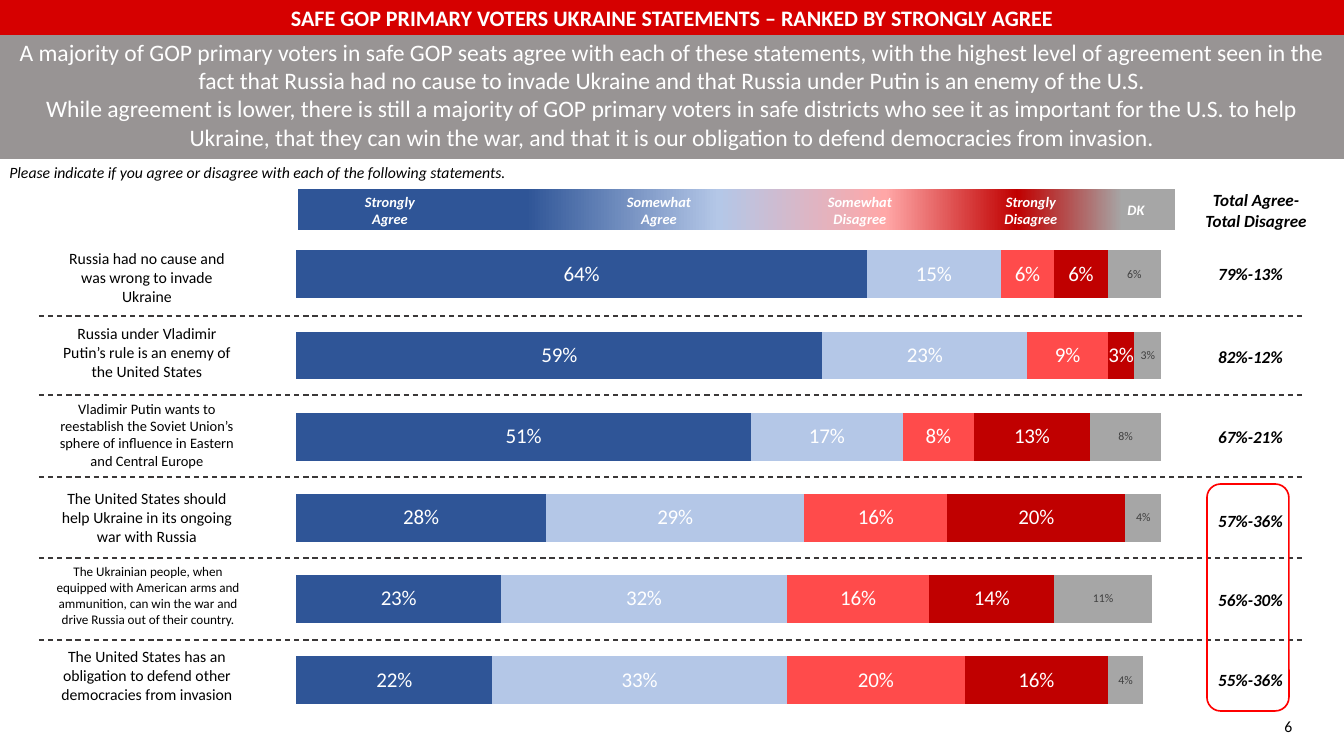
"""Build the slide of safe GOP primary voters' views on Ukraine statements."""
from pptx import Presentation
from pptx.chart.data import CategoryChartData
from pptx.dml.color import RGBColor
from pptx.enum.chart import XL_CHART_TYPE as CT, XL_LABEL_POSITION as LP
from pptx.enum.dml import MSO_LINE
from pptx.enum.shapes import MSO_CONNECTOR, MSO_SHAPE
from pptx.enum.text import MSO_ANCHOR, MSO_AUTO_SIZE, PP_ALIGN
from pptx.oxml import parse_xml
from pptx.oxml.ns import nsdecls, qn
from pptx.util import Pt

PX = 9676
FONT = "Calibri"
rgb = RGBColor.from_string


def put_text(tf, *lines, size=12, color="000000", bold=False, italic=False, align=PP_ALIGN.CENTER):
    tf.word_wrap = True
    for i, line in enumerate(lines):
        p = tf.add_paragraph() if i else tf.paragraphs[0]
        p.alignment = align
        r = p.add_run()
        r.text = line
        f = r.font
        f.name, f.size, f.bold, f.italic = FONT, Pt(size), bold, italic
        f.color.rgb = rgb(color)


def place(*lengths):
    return [n * PX for n in lengths]


prs = Presentation()
prs.slide_width, prs.slide_height = place(1344, 756)
s = prs.slides.add_slide(prs.slide_layouts[5])

title = s.shapes.title
title.left, title.top, title.width, title.height = place(0, 0, 1344, 35)
title.fill.solid()
title.fill.fore_color.rgb = rgb("D60000")
tf = title.text_frame
tf.auto_size = MSO_AUTO_SIZE.NONE
tf.vertical_anchor = MSO_ANCHOR.MIDDLE
put_text(tf, "SAFE GOP PRIMARY VOTERS UKRAINE STATEMENTS – RANKED BY STRONGLY AGREE",
         size=16.8, color="FFFFFF", bold=True)

band = s.shapes.add_shape(MSO_SHAPE.RECTANGLE, *place(0, 35, 1344, 124))
band.shadow.inherit = False
band.fill.solid()
band.fill.fore_color.rgb = rgb("989494")
band.line.fill.background()

summary = s.shapes.add_textbox(*place(0, 33, 1344, 124))
put_text(
    summary.text_frame,
    "A majority of GOP primary voters in safe GOP seats agree with each of these statements, "
    "with the highest level of agreement seen in the fact that Russia had no cause to invade "
    "Ukraine and that Russia under Putin is an enemy of the U.S.",
    "While agreement is lower, there is still a majority of GOP primary voters in safe districts "
    "who see it as important for the U.S. to help Ukraine, that they can win the war, and that "
    "it is our obligation to defend democracies from invasion.",
    size=18, color="FFFFFF")

question = s.shapes.add_textbox(*place(0, 158, 529, 28))
put_text(question.text_frame,
         "Please indicate if you agree or disagree with each of the following statements.",
         italic=True, align=PP_ALIGN.LEFT)

series = [
    ("2F5597", 16, "FFFFFF", (0.22, 0.23, 0.28, 0.51, 0.59, 0.64)),
    ("B4C7E7", 16, "FFFFFF", (0.33, 0.32, 0.29, 0.17, 0.23, 0.15)),
    ("FF4B4B", 16, "FFFFFF", (0.20, 0.16, 0.16, 0.08, 0.09, 0.06)),
    ("C00000", 16, "FFFFFF", (0.16, 0.14, 0.20, 0.13, 0.03, 0.06)),
    ("A6A6A6", 9, "404040", (0.04, 0.11, 0.04, 0.08, 0.03, 0.06)),
]
data = CategoryChartData(number_format="0%")
data.categories = ["1", "2", "3", "4", "5", "6"]
for i, (*_, values) in enumerate(series, 1):
    data.add_series(f"Series {i}", values)
chart = s.shapes.add_chart(CT.BAR_STACKED, *place(200, 210, 1001, 539), data).chart
chart.has_title = chart.has_legend = False
chart.font.name, chart.font.size = FONT, Pt(10)
chart.font.color.rgb = rgb("000000")
chart.category_axis.visible = False
axis = chart.value_axis
axis.visible = axis.has_major_gridlines = False
axis.minimum_scale, axis.maximum_scale = 0, 1
plot = chart.plots[0]
plot.gap_width, plot.overlap, plot.vary_by_categories = 70, 100, False
for ser, (fill, size, color, _) in zip(plot.series, series):
    ser.format.fill.solid()
    ser.format.fill.fore_color.rgb = rgb(fill)
    labels = ser.data_labels
    labels.show_value = True
    labels.position = LP.CENTER
    labels.number_format, labels.number_format_is_linked = "0%", False
    labels.font.name, labels.font.size = FONT, Pt(size)
    labels.font.color.rgb = rgb(color)

area = chart.element.find(f".//{qn('c:plotArea')}")
for old in area.findall(qn("c:layout")):
    area.remove(old)
area.insert(0, parse_xml(
    f'<c:layout {nsdecls("c")}><c:manualLayout><c:layoutTarget val="inner"/>'
    '<c:xMode val="edge"/><c:yMode val="edge"/><c:x val="0.096"/><c:y val="0.044"/>'
    '<c:w val="0.891"/><c:h val="0.904"/></c:manualLayout></c:layout>'))

legend = s.shapes.add_group_shape()
scale = legend.shapes.add_shape(MSO_SHAPE.RECTANGLE, *place(298, 189, 877, 41))
scale.shadow.inherit = False
scale.line.fill.background()
scale.fill.gradient()
scale.fill.gradient_angle = 0
stops = scale.element.spPr.find(f".//{qn('a:gsLst')}")
for old in list(stops):
    stops.remove(old)
for pos, color in [(26, "2F5597"), (48, "B4C7E7"), (67, "FFA7A7"), (82, "C00000"), (94, "A6A6A6")]:
    stops.append(parse_xml(
        f'<a:gs {nsdecls("a")} pos="{pos * 1000}"><a:srgbClr val="{color}"/></a:gs>'))

for x, y, w, lines in [
    (302, 188, 176, ["Strongly", "Agree"]),
    (556, 188, 206, ["Somewhat", "Agree"]),
    (796, 188, 128, ["Somewhat Disagree"]),
    (972, 188, 118, ["Strongly Disagree"]),
    (1094, 196, 84, ["DK"]),
]:
    tb = legend.shapes.add_textbox(*place(x, y, w, 43 if y == 188 else 24))
    put_text(tb.text_frame, *lines, size=11, color="FFFFFF", bold=True, italic=True)

for y in (316, 395, 477, 558, 640):
    rule = s.shapes.add_connector(MSO_CONNECTOR.STRAIGHT, *place(39, y, 1305, y))
    rule.line.color.rgb = rgb("3B3838")
    rule.line.width = Pt(1)
    rule.line.dash_style = MSO_LINE.DASH
    rule.element.spPr.append(parse_xml(f'<a:effectLst {nsdecls("a")}/>'))

header = s.shapes.add_textbox(*place(1192, 185, 128, 51))
put_text(header.text_frame, "Total Agree-Total Disagree", size=13, bold=True, italic=True)

rows = [
    (244, 67, 12, "Russia had no cause and was wrong to invade Ukraine", 259, "79%-13%"),
    (319, 67, 12, "Russia under Vladimir Putin’s rule is an enemy of the United States", 342, "82%-12%"),
    (395, 79, 11, "Vladimir Putin wants to reestablish the Soviet Union’s sphere of influence "
     "in Eastern and Central Europe", 422, "67%-21%"),
    (484, 67, 12, "The United States should help Ukraine in its ongoing war with Russia",
     506, "57%-36%"),
    (559, 73, 10, "The Ukrainian people, when equipped with American arms and ammunition, "
     "can win the war and drive Russia out of their country.", 585, "56%-30%"),
    (642, 67, 12, "The United States has an obligation to defend other democracies from invasion",
     665, "55%-36%"),
]
for y, h, size, statement, total_y, total in rows:
    x, w = (42, 212) if size == 10 else (47, 200)
    tb = s.shapes.add_textbox(*place(x, y, w, h))
    put_text(tb.text_frame, statement, size=size)
    tb = s.shapes.add_textbox(*place(1204, total_y, 93, 30))
    put_text(tb.text_frame, total, size=13, bold=True, italic=True)

highlight = s.shapes.add_shape(MSO_SHAPE.ROUNDED_RECTANGLE, *place(1207, 484, 82, 227))
highlight.shadow.inherit = False
highlight.fill.background()
highlight.line.color.rgb = rgb("FF0000")
highlight.line.width = Pt(1.25)

number = s.shapes.add_textbox(*place(1275, 712, 53, 28))
put_text(number.text_frame, "6", align=PP_ALIGN.LEFT)

prs.save("out.pptx")
